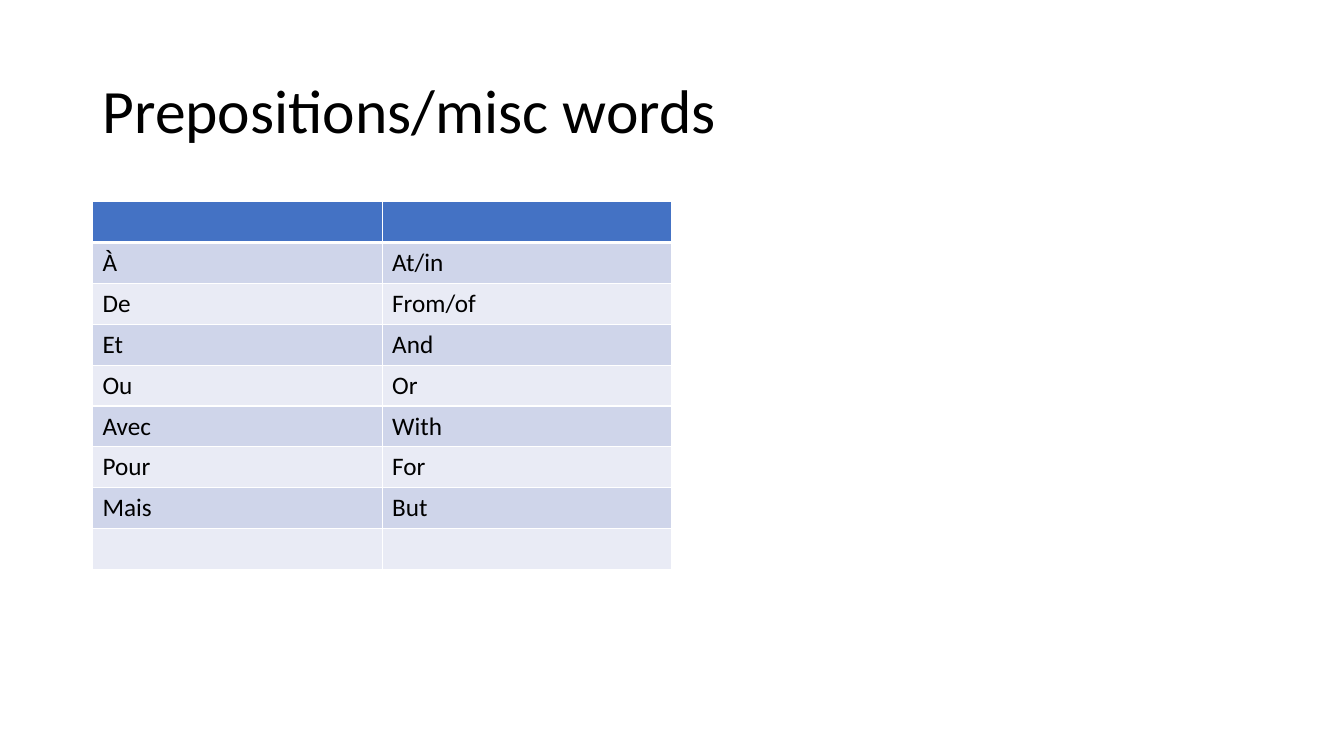
from lxml import etree
from pptx import Presentation
from pptx import util as u
from pptx.dml.color import RGBColor
from pptx.enum import text
from pptx.oxml import ns

BLACK = RGBColor(0x00, 0x00, 0x00)
WHITE = RGBColor(0xFF, 0xFF, 0xFF)
HEADER = RGBColor(0x44, 0x72, 0xC4)
BANDS = (RGBColor(0xE9, 0xEB, 0xF5), RGBColor(0xCF, 0xD5, 0xEA))
FONT = "Calibri"
ROW_HEIGHT = u.Cm(1.03)
WORDS = [
    ("", ""),
    ("À", "At/in"),
    ("De", "From/of"),
    ("Et", "And"),
    ("Ou", "Or"),
    ("Avec", "With"),
    ("Pour", "For"),
    ("Mais", "But"),
    ("", ""),
]


def format_font(font, size):
    """Give a font the slide's typeface and colour at the given size."""
    for name, value in {"name": FONT, "size": u.Pt(size), "bold": False}.items():
        setattr(font, name, value)
    font.color.rgb = BLACK


def add_title(slide, wording, left, top, width, height):
    """Place the title in its box, left-aligned and vertically centred."""
    title = slide.shapes.title
    box = {"left": left, "top": top, "width": width, "height": height}
    for name, value in box.items():
        setattr(title, name, value)
    frame = title.text_frame
    frame.text = wording
    frame.word_wrap = True
    frame.vertical_anchor = text.MSO_ANCHOR.MIDDLE
    paragraph = frame.paragraphs[0]
    paragraph.alignment = text.PP_ALIGN.LEFT
    paragraph.line_spacing = 0.9
    format_font(paragraph.font, 44)


def add_borders(cell, widths):
    """Draw white cell borders with the given widths in points."""
    properties = cell._tc.get_or_add_tcPr()
    for side, width in widths.items():
        line = etree.SubElement(properties, ns.qn(f"a:ln{side}"), w=str(u.Pt(width)))
        fill = etree.SubElement(line, ns.qn("a:solidFill"))
        etree.SubElement(fill, ns.qn("a:srgbClr"), val=str(WHITE))


def add_word_table(slide, words, left, top, width):
    """Place a banded two-language table with a header row."""
    height = ROW_HEIGHT * len(words)
    table = slide.shapes.add_table(len(words), 2, left, top, width, height).table
    for row, pair in enumerate(words):
        table.rows[row].height = ROW_HEIGHT
        for column, word in enumerate(pair):
            cell = table.cell(row, column)
            widths = {"L": 1, "R": 1, "T": 3 if row == 1 else 1, "B": 3 if row == 0 else 1}
            add_borders(cell, widths)
            cell.fill.solid()
            cell.fill.fore_color.rgb = BANDS[row % 2] if row else HEADER
            if word:
                cell.text = word
                format_font(cell.text_frame.paragraphs[0].runs[0].font, 18)


def main():
    """Build the vocabulary slide and save it."""
    presentation = Presentation()
    presentation.slide_width = u.Cm(33.87)
    presentation.slide_height = u.Cm(19.05)
    slide = presentation.slides.add_slide(presentation.slide_layouts[5])
    left = u.Cm(2.33)
    add_title(slide, "Prepositions/misc words", left, u.Cm(1.01), u.Cm(29.21), u.Cm(3.68))
    add_word_table(slide, WORDS, left, u.Cm(5.08), u.Cm(14.6))
    presentation.save("out.pptx")


if __name__ == "__main__":
    main()
